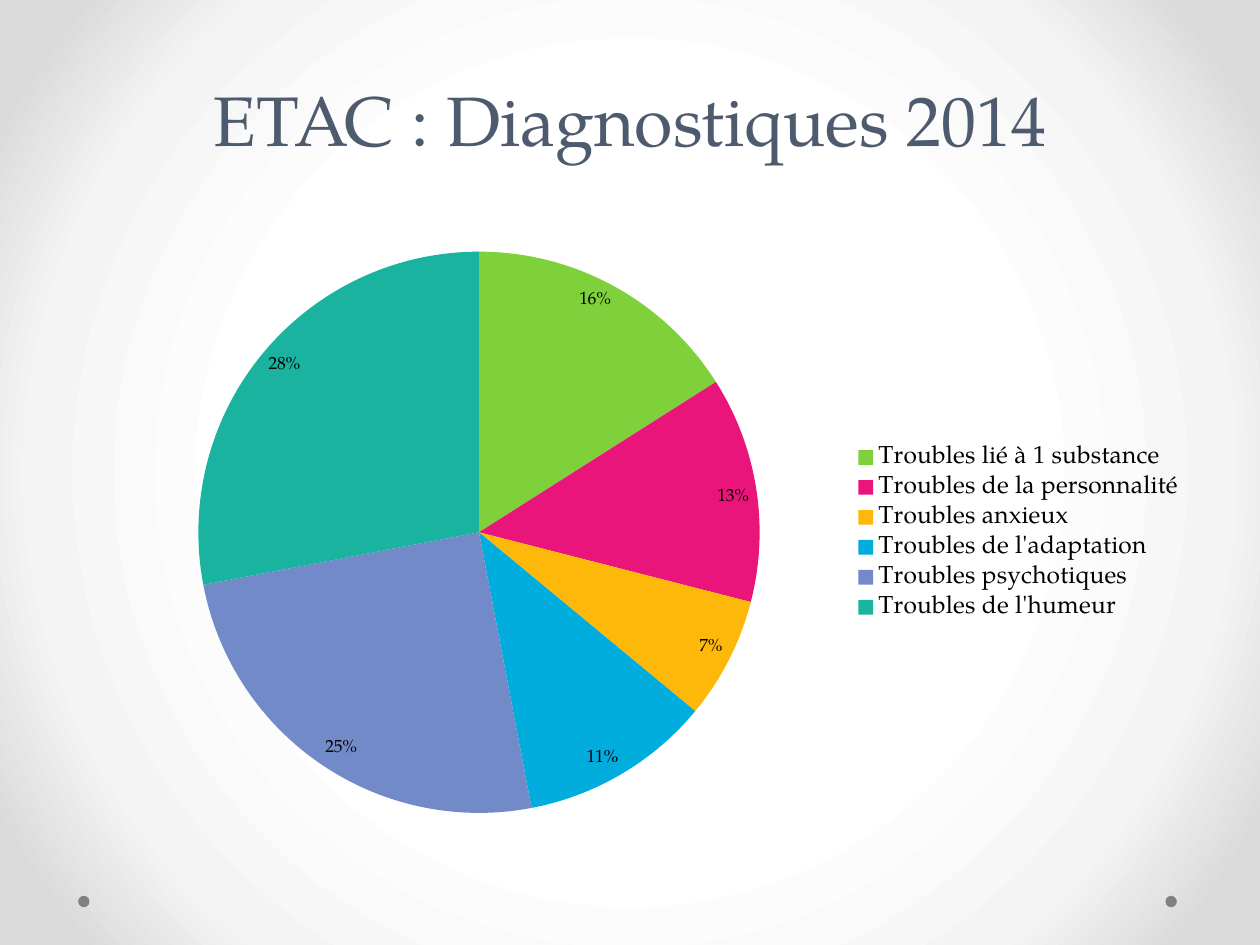
"""Build the ETAC 2014 diagnoses slide with its pie chart."""
from pptx import Presentation, util as u
from pptx.chart.data import CategoryChartData
from pptx.dml.color import RGBColor
from pptx.enum import chart as ch, shapes, text
from pptx.oxml import parse_xml
from pptx.oxml.ns import nsdecls, qn

FONT = "TeX Gyre Pagella"
COLORS = {
    "title": "4E5B6F", "dot": "808080", "label": "000000",
    "center": "FFFFFF", "middle": "F4F4F4", "edge": "DADADA",
    "substance": "7FD13B", "personality": "EA157A", "anxiety": "FEB80A",
    "adaptation": "00ADDC", "psychotic": "738AC8", "mood": "1AB39F",
}
DIAGNOSES = [
    ("Troubles lié à 1 substance", 16, "substance"),
    ("Troubles de la personnalité", 13, "personality"),
    ("Troubles anxieux", 7, "anxiety"),
    ("Troubles de l'adaptation", 11, "adaptation"),
    ("Troubles psychotiques", 25, "psychotic"),
    ("Troubles de l'humeur", 28, "mood"),
]


def rgb(name):
    return RGBColor.from_string(COLORS[name])


prs = Presentation()
prs.slide_width, prs.slide_height = u.Inches(10), u.Inches(7.5)
s = prs.slides.add_slide(prs.slide_layouts[5])

stops = "".join(
    f'<a:gs pos="{pos * 1000}"><a:srgbClr val="{COLORS[name]}"/></a:gs>'
    for pos, name in [(50, "center"), (76, "middle"), (92, "edge")])
s.element.cSld.insert(0, parse_xml(
    f'<p:bg {nsdecls("p", "a")}><p:bgPr><a:gradFill rotWithShape="1">'
    f'<a:gsLst>{stops}</a:gsLst><a:path path="circle">'
    '<a:fillToRect l="50000" t="50000" r="50000" b="50000"/></a:path>'
    '</a:gradFill><a:effectLst/></p:bgPr></p:bg>'))

for left in (9.25, 0.62):
    sp = s.shapes.add_shape(shapes.MSO_SHAPE.OVAL, u.Inches(left), u.Inches(7.11),
                            u.Inches(0.09), u.Inches(0.09))
    sp.shadow.inherit = False
    sp.fill.solid()
    sp.fill.fore_color.rgb = rgb("dot")
    sp.line.fill.background()

title = s.shapes.title
title.left, title.top = u.Inches(0.5), u.Inches(0)
title.width, title.height = u.Inches(9), u.Inches(1.75)
tf = title.text_frame
tf.vertical_anchor = text.MSO_ANCHOR.MIDDLE
p = tf.paragraphs[0]
p.alignment = text.PP_ALIGN.CENTER
p.line_spacing = u.Pt(58)
r = p.add_run()
r.text = "ETAC : Diagnostiques 2014"
r.font.name, r.font.size = FONT, u.Pt(40)
r.font.color.rgb = rgb("title")

data = CategoryChartData()
data.categories = [name for name, _, _ in DIAGNOSES]
data.add_series("Series 1", [value for _, value, _ in DIAGNOSES])
chart = s.shapes.add_chart(ch.XL_CHART_TYPE.PIE, u.Inches(1.12), u.Inches(1.75),
                           u.Inches(8.38), u.Inches(4.95), data).chart
chart.has_title = False
chart.font.name, chart.font.size = FONT, u.Pt(10)
chart.font.color.rgb = rgb("label")

chart.has_legend = True
legend = chart.legend
legend.position = ch.XL_LEGEND_POSITION.RIGHT
legend.include_in_layout = False
legend.font.name, legend.font.size = FONT, u.Pt(14)
legend.font.color.rgb = rgb("label")

plot = chart.plots[0]
plot.vary_by_categories = True
for i, (_, _, color) in enumerate(DIAGNOSES):
    point = plot.series[0].points[i]
    point.format.fill.solid()
    point.format.fill.fore_color.rgb = rgb(color)
    point.format.line.fill.background()

plot.has_data_labels = True
labels = plot.data_labels
labels.show_percentage, labels.show_value = True, False
labels.number_format, labels.number_format_is_linked = "0%", False
labels.position = ch.XL_LABEL_POSITION.INSIDE_END
labels.font.name, labels.font.size = FONT, u.Pt(10)
labels.font.color.rgb = rgb("label")

area = chart.element.find(".//" + qn("c:plotArea"))
for old in area.findall(qn("c:layout")):
    area.remove(old)
frame = "".join(f'<c:{key} val="{val}"/>' for key, val in
                [("x", 0.03), ("y", 0.05), ("w", 0.58), ("h", 0.9)])
area.insert(0, parse_xml(
    f'<c:layout {nsdecls("c")}><c:manualLayout><c:layoutTarget val="inner"/>'
    f'<c:xMode val="edge"/><c:yMode val="edge"/>{frame}'
    '</c:manualLayout></c:layout>'))

prs.save("out.pptx")
